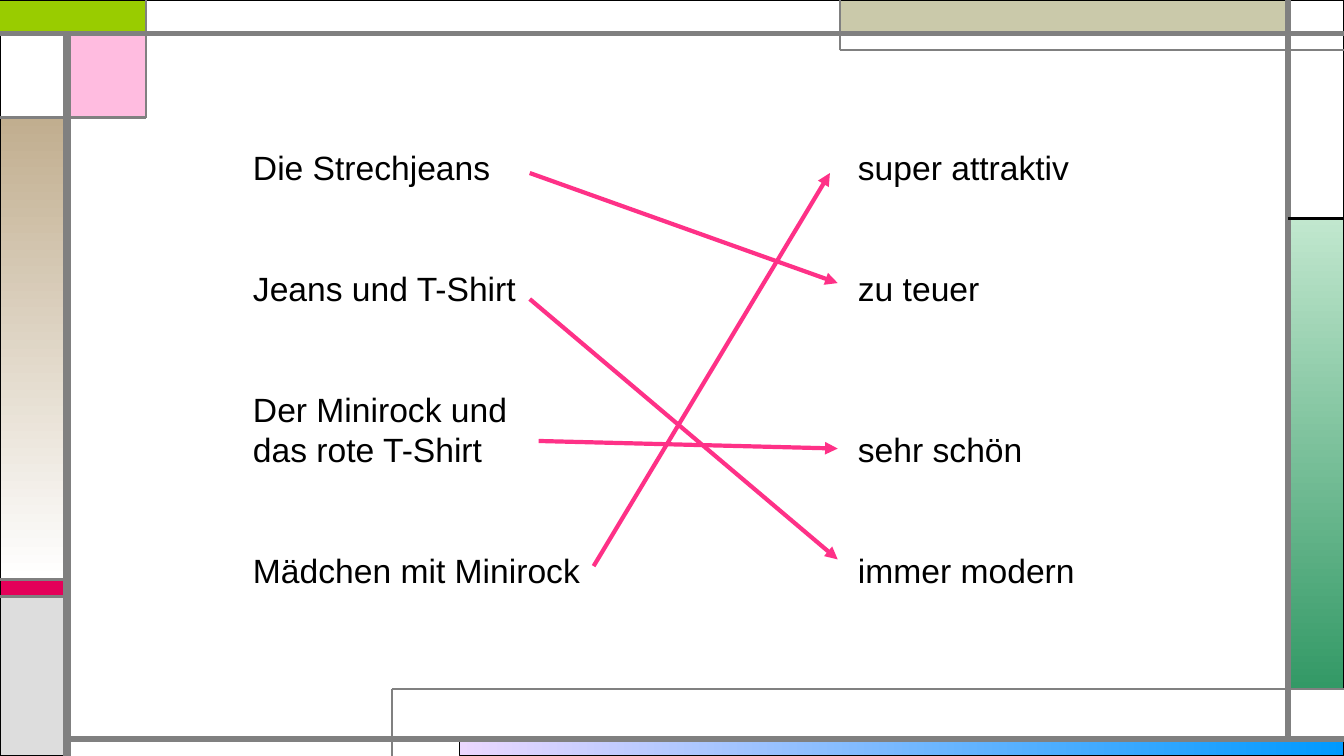
from pptx import Presentation
from pptx import util as u
from pptx.dml.color import RGBColor
from pptx.enum import shapes, text
from pptx.oxml.ns import qn
from lxml import etree

WIDTH, HEIGHT = u.Inches(13.33), u.Inches(7.5)
COLUMNS, ROWS = 120, 90
GREY, BLACK, WHITE, PINK = "808080", "000000", "FFFFFF", "FE3187"
LINE_PITCH = 28.8

# left, top, right, bottom in grid units; fill (two colours make a gradient)
PANELS = [
    (41, 88, 120, 90, ("EBD7FF", "0099FF"), 0),
    (115, 26, 120, 82, ("C1E7CE", "339966"), 270),
    (0, 69, 6, 71, "E40059"),
    (0, 71, 6, 90, "DDDDDD"),
    (115, 0, 120, 26, WHITE),
    (75, 0, 115, 4, "CAC9AA"),
    (6, 4, 13, 14, "FFBCE0"),
    (0, 14, 6, 69, ("C1AE8F", WHITE), 270),
    (0, 4, 6, 14, WHITE),
    (0, 0, 13, 4, "99CC00"),
    (13, 0, 75, 4, WHITE),
]

# start column and row, end column and row, width, colour
RULES = [
    (6, 90, 6, 4, 6, GREY),
    (6, 88, 120, 88, 4.5, GREY),
    (115, 88, 115, 0, 4.5, GREY),
    (0, 4, 120, 4, 3, GREY),
    (120, 6, 75, 6, 1.5, GREY),
    (75, 6, 75, 0, 1.5, GREY),
    (115, 26, 120, 26, 2.25, BLACK),
    (13, 0, 13, 14, 1.5, GREY),
    (13, 14, 0, 14, 2.25, GREY),
    (35, 90, 35, 82, 1.5, GREY),
    (35, 82, 120, 82, 1.5, GREY),
    (6, 69, 0, 69, 2.25, GREY),
    (6, 71, 0, 71, 2.25, GREY),
]

MATCHES = [
    (47.3, 20.6, 74.8, 33.7),
    (47.3, 35.6, 74.8, 66.6),
    (48.1, 52.5, 74.8, 53.4),
    (53, 67.4, 74.1, 20.6),
]

# wording and the number of free lines above it
PHRASES = [
    ("Die Strechjeans\tsuper attraktiv", 0),
    ("Jeans und T-Shirt\tzu teuer", 2),
    ("Der Minirock und", 2),
    ("das rote T-Shirt\tsehr schön", 0),
    ("Mädchen mit Minirock\timmer modern", 2),
]


def color(value):
    return RGBColor.from_string(value)


def col(number):
    return round(WIDTH * number / COLUMNS)


def row(number):
    return round(HEIGHT * number / ROWS)


def apply(target, values):
    for name, value in values.items():
        setattr(target, name, value)


def add_panel(slide, left, top, right, bottom, fill, angle=None):
    panel = slide.shapes.add_shape(
        shapes.MSO_SHAPE.RECTANGLE, col(left), row(top),
        col(right - left), row(bottom - top))
    panel.shadow.inherit = False
    if angle is None:
        panel.fill.solid()
        panel.fill.fore_color.rgb = color(fill)
    else:
        panel.fill.gradient()
        panel.fill.gradient_angle = angle
        for stop, shade in zip(panel.fill.gradient_stops, fill):
            stop.color.rgb = color(shade)
    panel.line.color.rgb = color(BLACK)
    panel.line.width = u.Pt(0.75)
    return panel


def add_rule(slide, x1, y1, x2, y2, width, shade):
    rule = slide.shapes.add_connector(
        shapes.MSO_CONNECTOR.STRAIGHT, col(x1), row(y1), col(x2), row(y2))
    rule.line.color.rgb = color(shade)
    rule.line.width = u.Pt(width)
    etree.SubElement(rule._element.spPr, qn("a:effectLst"))
    return rule


def add_arrow(slide, *ends):
    arrow = add_rule(slide, *ends, 3, PINK)
    etree.SubElement(arrow.line._get_or_add_ln(), qn("a:tailEnd"), type="triangle")


def add_phrases(slide):
    """Two columns of phrases, the second one set at a tab stop."""
    box = slide.shapes.add_textbox(col(21.7), row(16.9), col(78.4), row(54))
    frame = box.text_frame
    apply(frame, {"word_wrap": True, "auto_size": text.MSO_AUTO_SIZE.NONE})
    for index, (wording, free_lines) in enumerate(PHRASES):
        phrase = frame.paragraphs[0] if index == 0 else frame.add_paragraph()
        phrase.text = wording
        apply(phrase, {"line_spacing": u.Pt(LINE_PITCH),
                       "space_before": u.Pt(LINE_PITCH * free_lines)})
        apply(phrase.runs[0].font, {"name": "Arial", "size": u.Pt(24)})
        phrase.runs[0].font.color.rgb = color(BLACK)
        tabs = etree.SubElement(phrase._p.get_or_add_pPr(), qn("a:tabLst"))
        etree.SubElement(tabs, qn("a:tab"), pos=str(u.Inches(6)), algn="l")


def main():
    deck = Presentation()
    apply(deck, {"slide_width": WIDTH, "slide_height": HEIGHT})
    slide = deck.slides.add_slide(deck.slide_layouts[6])
    for panel in PANELS:
        add_panel(slide, *panel)
    for rule in RULES:
        add_rule(slide, *rule)
    add_phrases(slide)
    for match in MATCHES:
        add_arrow(slide, *match)
    deck.save("out.pptx")


if __name__ == "__main__":
    main()
